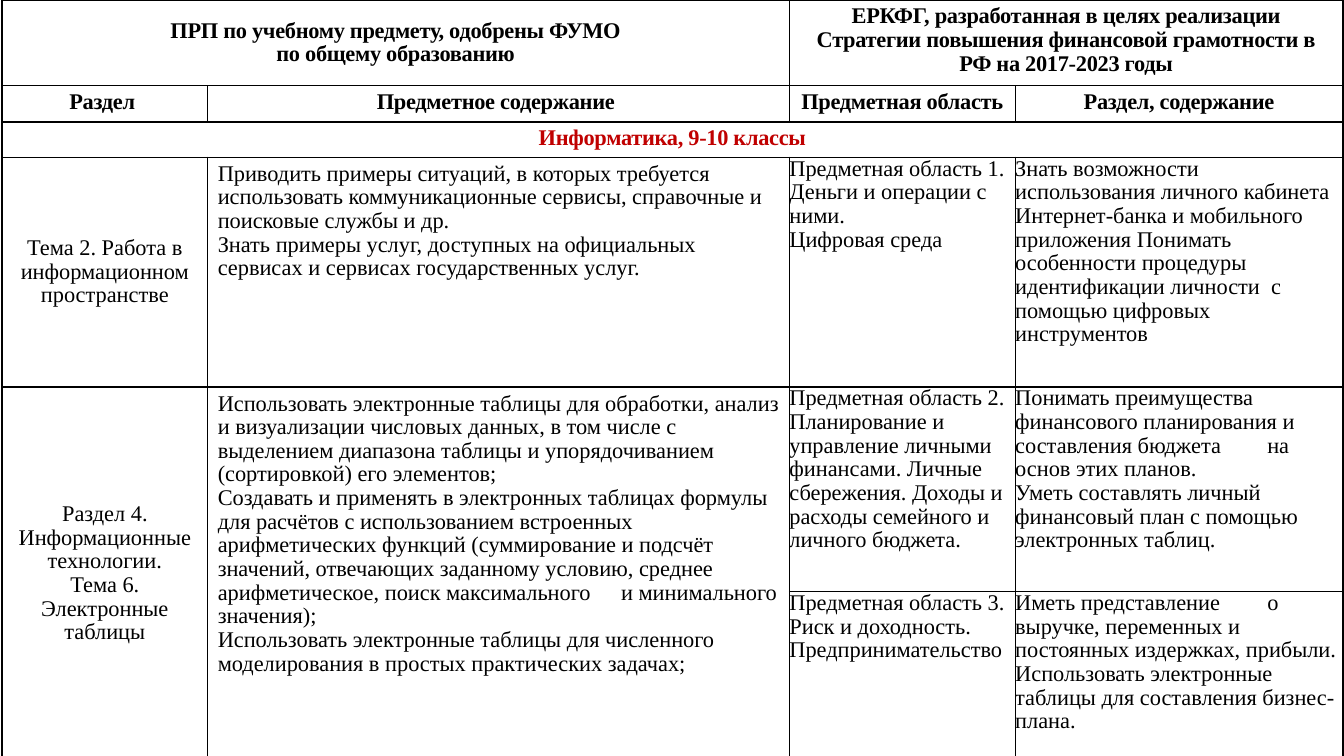
from lxml import etree
from pptx import Presentation
from pptx.dml.color import RGBColor
from pptx.enum.text import MSO_ANCHOR, PP_ALIGN
from pptx.oxml.ns import qn
from pptx.util import Inches, Pt

CENTER, LEFT = PP_ALIGN.CENTER, PP_ALIGN.LEFT
MIDDLE, TOP = MSO_ANCHOR.MIDDLE, MSO_ANCHOR.TOP
BLACK = RGBColor(0x00, 0x00, 0x00)
RED = RGBColor(0xC0, 0x00, 0x00)

COLUMN_WIDTHS = (2.04, 5.77, 2.24, 3.25)
ROW_HEIGHTS = (0.85, 0.36, 0.35, 2.28, 2.03, 1.67)
MERGES = (((0, 0), (0, 1)), ((0, 2), (0, 3)), ((2, 0), (2, 3)),
          ((4, 0), (5, 0)), ((4, 1), (5, 1)))

HEADER = {"align": CENTER, "bold": True}
HEADER_MIDDLE = {**HEADER, "anchor": MIDDLE}
SUBJECT = {**HEADER, "color": RED}
SECTION = {"align": CENTER, "anchor": MIDDLE}
CONTENT = {}
DOMAIN = {"margins": (0, 0)}

CELLS = {
    (0, 0): (HEADER_MIDDLE, ["ПРП по учебному предмету, одобрены ФУМО",
                             "по общему образованию"]),
    (0, 2): (HEADER, ["ЕРКФГ, разработанная в целях реализации Стратегии "
                      "повышения финансовой грамотности в РФ на 2017-2023 годы"]),
    (1, 0): (HEADER, ["Раздел "]),
    (1, 1): (HEADER, ["Предметное содержание "]),
    (1, 2): (HEADER, ["Предметная область"]),
    (1, 3): (HEADER, ["Раздел, содержание"]),
    (2, 0): (SUBJECT, ["Информатика, 9-10 классы"]),
    (3, 0): (SECTION, ["Тема 2. Работа в информационном пространстве"]),
    (3, 1): (CONTENT, [
        "Приводить примеры ситуаций, в которых требуется использовать "
        "коммуникационные сервисы, справочные и поисковые службы и др.",
        "Знать примеры услуг, доступных на официальных сервисах и сервисах "
        "государственных услуг."]),
    (3, 2): (DOMAIN, ["Предметная область 1.", "Деньги и операции с ними.",
                      "Цифровая среда"]),
    (3, 3): (DOMAIN, [
        "Знать возможности использования личного кабинета Интернет-банка и "
        "мобильного приложения Понимать особенности процедуры идентификации "
        "личности  с помощью цифровых инструментов"]),
    (4, 0): (SECTION, ["Раздел 4.", "Информационные технологии.", "Тема 6.",
                       "Электронные таблицы"]),
    (4, 1): (CONTENT, [
        "Использовать электронные таблицы для обработки, анализ и визуализации "
        "числовых данных, в том числе с выделением диапазона таблицы и "
        "упорядочиванием (сортировкой) его элементов;",
        "Создавать и применять в электронных таблицах формулы для расчётов с "
        "использованием встроенных арифметических функций (суммирование и "
        "подсчёт значений, отвечающих заданному условию, среднее "
        "арифметическое, поиск максимального\tи минимального значения);",
        "Использовать электронные таблицы для численного моделирования в "
        "простых практических задачах;"]),
    (4, 2): (DOMAIN, [
        "Предметная область 2.",
        "Планирование и управление личными финансами. Личные сбережения. "
        "Доходы и расходы семейного и личного бюджета."]),
    (4, 3): (DOMAIN, [
        "Понимать преимущества финансового планирования и составления "
        "бюджета\tна основ этих планов.",
        "Уметь составлять личный финансовый план с помощью электронных таблиц."]),
    (5, 2): (DOMAIN, ["Предметная область 3.", "Риск и доходность.",
                      "Предпринимательство"]),
    (5, 3): (DOMAIN, [
        "Иметь представление\tо выручке, переменных и постоянных издержках, "
        "прибыли.",
        "Использовать электронные таблицы для составления бизнес-плана."]),
}


def set_attributes(target, values):
    for name, value in values.items():
        setattr(target, name, value)


def draw_borders(cell):
    properties = cell._tc.get_or_add_tcPr()
    for side in ("a:lnL", "a:lnR", "a:lnT", "a:lnB"):
        line = etree.SubElement(properties, qn(side), w=str(Pt(1)))
        fill = etree.SubElement(line, qn("a:solidFill"))
        etree.SubElement(fill, qn("a:srgbClr"), val=str(BLACK))


def format_cell(cell, style):
    horizontal, vertical = style.get("margins", (0.1, 0.05))
    set_attributes(cell, {
        "margin_left": Inches(horizontal), "margin_right": Inches(horizontal),
        "margin_top": Inches(vertical), "margin_bottom": Inches(vertical),
        "vertical_anchor": style.get("anchor", TOP)})
    draw_borders(cell)
    cell.fill.background()


def write_cell(cell, style, lines):
    frame = cell.text_frame
    bold = style.get("bold", False)
    for index, text in enumerate(lines):
        paragraph = frame.add_paragraph() if index else frame.paragraphs[0]
        set_attributes(paragraph, {"alignment": style.get("align", LEFT),
                                   "line_spacing": 0.95})
        run = paragraph.add_run()
        run.text = text
        set_attributes(run.font, {"name": "Times New Roman", "size": Pt(16),
                                  "bold": bold})
        run.font.color.rgb = style.get("color", BLACK)
        if bold:
            run.font._element.set("spc", "-20")


def add_curriculum_table(slide):
    frame = slide.shapes.add_table(
        len(ROW_HEIGHTS), len(COLUMN_WIDTHS), Inches(0.02), Inches(0),
        Inches(sum(COLUMN_WIDTHS)), Inches(sum(ROW_HEIGHTS)))
    table = frame.table
    set_attributes(table, {"first_row": False, "horz_banding": False})
    for column, width in zip(table.columns, COLUMN_WIDTHS):
        column.width = Inches(width)
    for row, height in zip(table.rows, ROW_HEIGHTS):
        row.height = Inches(height)
    for start, end in MERGES:
        table.cell(*start).merge(table.cell(*end))
    for row in range(len(ROW_HEIGHTS)):
        for column in range(len(COLUMN_WIDTHS)):
            style, lines = CELLS.get((row, column), (DOMAIN, []))
            cell = table.cell(row, column)
            format_cell(cell, style)
            write_cell(cell, style, lines)


def main():
    presentation = Presentation()
    set_attributes(presentation, {"slide_width": Inches(13.33),
                                  "slide_height": Inches(7.5)})
    slide = presentation.slides.add_slide(presentation.slide_layouts[6])
    add_curriculum_table(slide)
    presentation.save("out.pptx")


if __name__ == "__main__":
    main()
